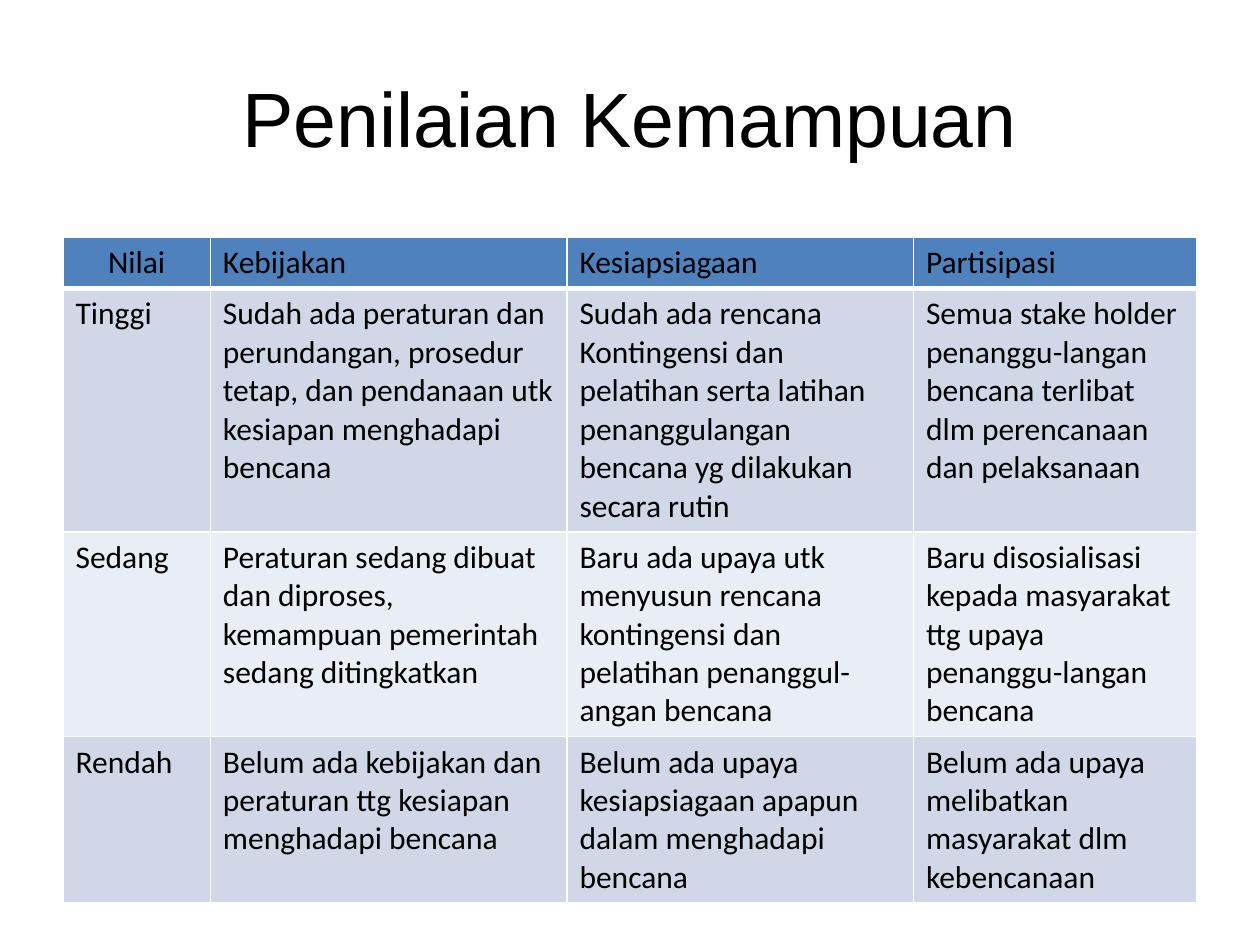
from lxml import etree
from pptx import Presentation
from pptx.dml.color import RGBColor
from pptx.enum.text import MSO_ANCHOR, PP_ALIGN
from pptx.oxml.ns import qn
from pptx.util import Inches, Pt

LEFT, CENTER = PP_ALIGN.LEFT, PP_ALIGN.CENTER
TOP, MIDDLE = MSO_ANCHOR.TOP, MSO_ANCHOR.MIDDLE

COLORS = {
    "text": "000000",
    "line": "FFFFFF",
    "head": "4F81BD",
    "odd": "D0D8E8",
    "even": "E9EDF4",
}

TITLE = "Penilaian Kemampuan"
COLS = [1.17, 2.83, 2.75, 2.25]
HEIGHTS = [0.41, 1.9, 1.6, 1.3]
ROWS = [
    ["Nilai", "Kebijakan", "Kesiapsiagaan", "Partisipasi"],
    [
        "Tinggi",
        "Sudah ada peraturan dan perundangan, prosedur tetap, dan "
        "pendanaan utk kesiapan menghadapi bencana",
        "Sudah ada rencana Kontingensi dan pelatihan serta latihan "
        "penanggulangan bencana yg dilakukan secara rutin",
        "Semua stake holder penanggu-langan bencana terlibat dlm "
        "perencanaan dan pelaksanaan",
    ],
    [
        "Sedang",
        "Peraturan sedang dibuat dan diproses, kemampuan pemerintah "
        "sedang ditingkatkan",
        "Baru ada upaya utk menyusun rencana kontingensi dan pelatihan "
        "penanggul-angan bencana",
        "Baru disosialisasi kepada masyarakat ttg upaya penanggu-langan "
        "bencana",
    ],
    [
        "Rendah",
        "Belum ada kebijakan dan peraturan ttg kesiapan menghadapi bencana",
        "Belum ada upaya kesiapsiagaan apapun dalam menghadapi bencana",
        "Belum ada upaya melibatkan masyarakat dlm kebencanaan",
    ],
]


def write(frame, text, font="Calibri", size=18, color="text", align=LEFT):
    para = frame.paragraphs[0]
    para.alignment = align
    run = para.add_run()
    run.text = text
    run.font.name = font
    run.font.size = Pt(size)
    run.font.bold = False
    run.font.color.rgb = RGBColor.from_string(COLORS[color])


def edge(cell, side, width):
    """Draw one cell border; side is L, R, T or B."""
    line = etree.SubElement(cell._tc.get_or_add_tcPr(), qn(f"a:ln{side}"))
    line.set("w", str(Pt(width)))
    fill = etree.SubElement(line, qn("a:solidFill"))
    etree.SubElement(fill, qn("a:srgbClr")).set("val", COLORS["line"])


class Deck:
    def __init__(self, width, height):
        self.prs = Presentation()
        self.prs.slide_width = Inches(width)
        self.prs.slide_height = Inches(height)
        self.slide = self.prs.slides.add_slide(self.prs.slide_layouts[5])

    def title(self, text, left, top, width, height):
        shape = self.slide.shapes.title
        shape.left, shape.top = Inches(left), Inches(top)
        shape.width, shape.height = Inches(width), Inches(height)
        shape.text_frame.vertical_anchor = MIDDLE
        write(shape.text_frame, text, font="Arial", size=44, align=CENTER)

    def table(self, rows, cols, heights, left, top):
        table = self.slide.shapes.add_table(
            len(rows), len(cols), Inches(left), Inches(top),
            Inches(sum(cols)), Inches(sum(heights))).table
        for col, width in zip(table.columns, cols):
            col.width = Inches(width)
        for r, texts in enumerate(rows):
            table.rows[r].height = Inches(heights[r])
            shade = "head" if r == 0 else "odd" if r % 2 else "even"
            for c, text in enumerate(texts):
                align = CENTER if r == c == 0 else LEFT
                self.cell(table.cell(r, c), text, shade, align)

    def cell(self, cell, text, shade, align):
        cell.margin_left = cell.margin_right = Inches(0.1)
        cell.margin_top = cell.margin_bottom = Inches(0.05)
        cell.vertical_anchor = TOP
        for side in "LRTB":
            edge(cell, side, 3 if shade == "head" and side == "B" else 1)
        cell.fill.solid()
        cell.fill.fore_color.rgb = RGBColor.from_string(COLORS[shade])
        write(cell.text_frame, text, align=align)


def main():
    deck = Deck(10, 7.5)
    deck.title(TITLE, 0.5, 0.3, 9, 1.25)
    deck.table(ROWS, COLS, HEIGHTS, 0.5, 1.88)
    deck.prs.save("out.pptx")


if __name__ == "__main__":
    main()
